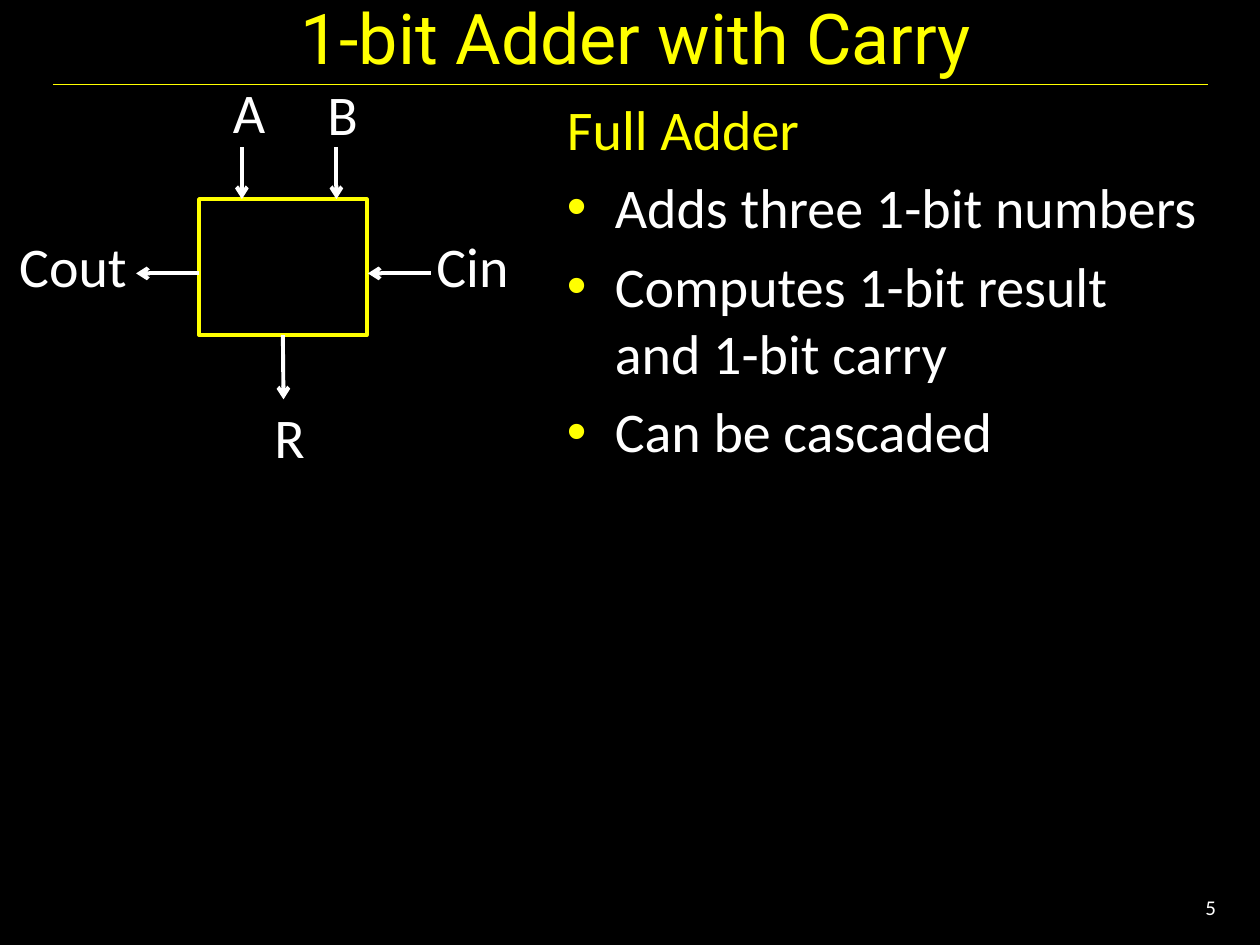
from pptx import Presentation
from pptx.dml.color import RGBColor
from pptx.enum.shapes import MSO_CONNECTOR, MSO_SHAPE
from pptx.enum.text import MSO_ANCHOR, MSO_AUTO_SIZE, PP_ALIGN
from pptx.oxml.ns import qn
from pptx.util import Inches, Pt
from lxml.etree import SubElement

BLACK = RGBColor(0, 0, 0)
WHITE = RGBColor(255, 255, 255)
YELLOW = RGBColor(255, 255, 0)
BOTTOM = 2


def add_box(s, x, y, w, h, anchor=MSO_ANCHOR.TOP, inset=True, wrap=True):
    tf = s.shapes.add_textbox(Inches(x), Inches(y), Inches(w), Inches(h)).text_frame
    tf.word_wrap = wrap
    tf.vertical_anchor = anchor
    if not inset:
        tf.margin_left = tf.margin_top = tf.margin_right = tf.margin_bottom = 0
    return tf


def add_run(p, text, size=32, color=WHITE, font="Calibri"):
    r = p.add_run()
    r.text = text
    r.font.size = Pt(size)
    r.font.name = font
    r.font.color.rgb = color


def add_line(s, x1, y1, x2, y2, color=WHITE, width=2.25, arrow=True):
    line = s.shapes.add_connector(
        MSO_CONNECTOR.STRAIGHT, Inches(x1), Inches(y1), Inches(x2), Inches(y2))
    line.line.color.rgb = color
    line.line.width = Pt(width)
    if arrow:
        SubElement(line.line._get_or_add_ln(), qn("a:tailEnd"), type="arrow")
    SubElement(line._element.spPr, qn("a:effectLst"))
    return line


def add_title(s, text):
    p = add_box(s, 0.42, 0, 9.25, 0.58, MSO_ANCHOR.MIDDLE).paragraphs[0]
    p.alignment = PP_ALIGN.CENTER
    add_run(p, text, 40, YELLOW, "Roboto")
    add_line(s, 0.42, 0.67, 9.59, 0.67, YELLOW, 0.75, arrow=False)


def add_page_number(s, text):
    p = add_box(s, 8.92, 7, 0.83, 0.4, MSO_ANCHOR.MIDDLE).paragraphs[0]
    p.alignment = PP_ALIGN.RIGHT
    add_run(p, text, 12)


def add_bullet(p):
    pPr = p._p.get_or_add_pPr()
    color = SubElement(pPr, qn("a:buClr"))
    SubElement(color, qn("a:srgbClr"), val=str(YELLOW))
    SubElement(pPr, qn("a:buFont"), typeface="Arial")
    SubElement(pPr, qn("a:buChar"), char="•")


def add_description(s, heading, points):
    tf = add_box(s, 4.5, 0.75, 5.03, 6.2, inset=False)
    for i, text in enumerate([heading, *points]):
        p = tf.add_paragraph() if i else tf.paragraphs[0]
        p.space_before = Pt(6.4)
        pPr = p._p.get_or_add_pPr()
        pPr.set("marL", str(Inches(0.38)))
        pPr.set("indent", str(Inches(-0.38)))
        if i:
            add_bullet(p)
        add_run(p, text, color=WHITE if i else YELLOW)


def add_label(s, text, x, y, w, h, narrow):
    tf = add_box(s, x, y, w, h, inset=narrow, wrap=narrow)
    if narrow:
        tf.auto_size = MSO_AUTO_SIZE.SHAPE_TO_FIT_TEXT
    p = tf.paragraphs[0]
    p.alignment = PP_ALIGN.CENTER
    p.line_spacing = 1.16
    add_run(p, text)


def add_adder(s):
    sp = s.shapes.add_shape(
        MSO_SHAPE.RECTANGLE, Inches(1.58), Inches(1.58), Inches(1.33), Inches(1.08))
    sp.shadow.inherit = False
    sp.fill.background()
    sp.line.color.rgb = YELLOW
    sp.line.width = Pt(2.25)

    for x in (1.92, 2.67):
        add_line(s, x, 1.17, x, 1.58)
    for x in (1.58, 3.42):
        add_line(s, x, 2.17, x - 0.5, 2.17)
    add_line(s, 2.25, 2.67, 2.25, 3.17).begin_connect(sp, BOTTOM)

    for text, x, y in (("A", 1.75, 0.48), ("B", 2.5, 0.5), ("R", 2.08, 3.06)):
        add_label(s, text, x, y, 0.33, 0.69, narrow=True)
    for text, x in (("Cout", 0.08), ("Cin", 3.25)):
        add_label(s, text, x, 1.75, 1, 0.73, narrow=False)


def main():
    prs = Presentation()
    prs.slide_width, prs.slide_height = Inches(10), Inches(7.5)
    s = prs.slides.add_slide(prs.slide_layouts[6])
    s.background.fill.solid()
    s.background.fill.fore_color.rgb = BLACK

    add_title(s, "1-bit Adder with Carry")
    add_page_number(s, "5")
    add_description(s, "Full Adder", [
        "Adds three 1-bit numbers",
        "Computes 1-bit result and 1-bit carry",
        "Can be cascaded",
    ])
    add_adder(s)
    prs.save("out.pptx")


if __name__ == "__main__":
    main()
